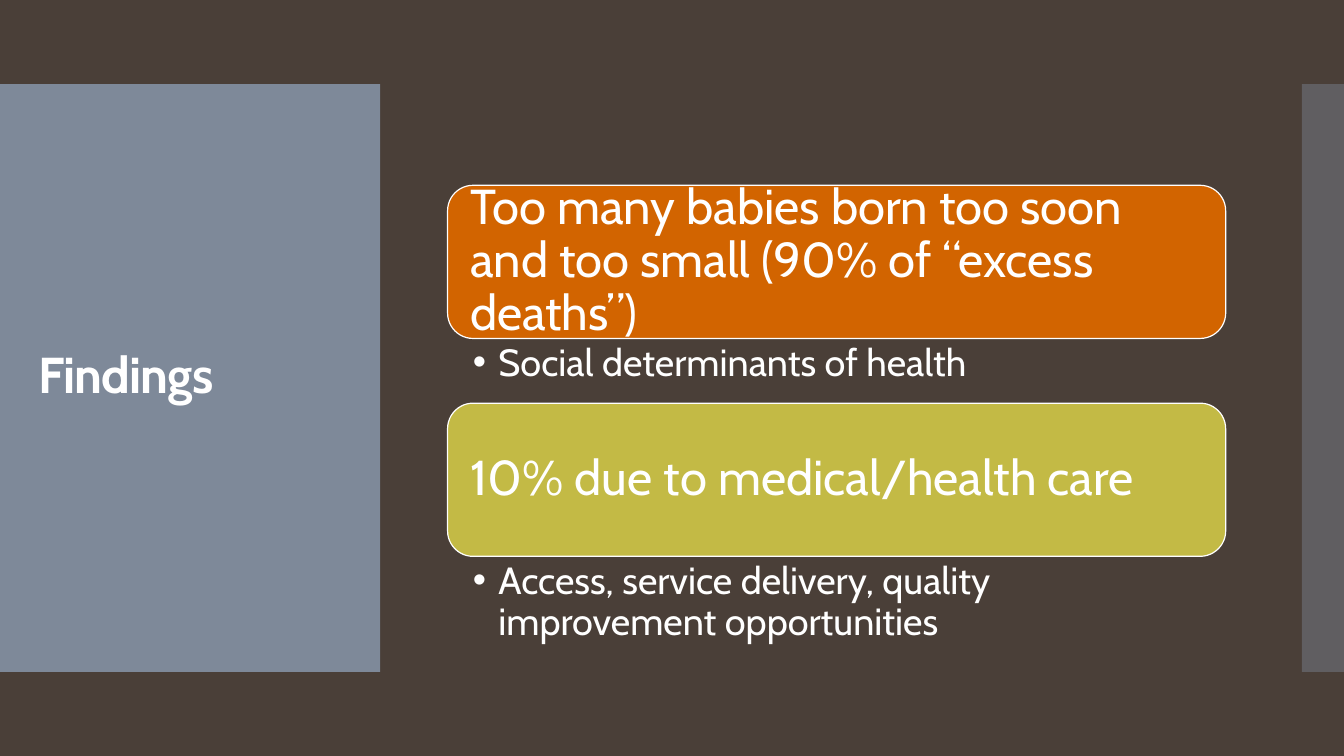
from lxml.etree import SubElement
from pptx import Presentation
from pptx.dml.color import RGBColor
from pptx.enum.shapes import MSO_SHAPE
from pptx.enum.text import MSO_ANCHOR, MSO_AUTO_SIZE, PP_ALIGN
from pptx.oxml.ns import qn
from pptx.util import Cm, Pt

COLORS = {
    "background": "4A3F38",
    "panel": "818E9F",
    "white": "FFFFFF",
    "orange": "D26400",
    "olive": "C3BA45",
}
FONT = "Cabin"

PANEL_TOP, PANEL_HEIGHT = 2.12, 14.81
CARD_LEFT, CARD_WIDTH, CARD_HEIGHT = 11.28, 19.61, 3.86
FIRST_CARD_TOP, CARD_PITCH = 4.67, 5.49

# heading, card colour, detail, detail height
FINDINGS = [
    ("Too many babies born too soon and too small (90% of “excess deaths”)",
     "orange", "Social determinants of health", 1.6),
    ("10% due to medical/health care",
     "olive", "Access, service delivery, quality improvement opportunities", 2.36),
]


def rgb(name):
    return RGBColor.from_string(COLORS[name])


def write_text(shape, text, size, bold=False, anchor=MSO_ANCHOR.MIDDLE,
               insets=(0.25, 0.13, 0.25, 0.13), spacing=0):
    """Fill a shape with one left-aligned paragraph; insets run left, top, right, bottom."""
    frame = shape.text_frame
    frame.word_wrap = True
    frame.auto_size = MSO_AUTO_SIZE.NONE
    frame.vertical_anchor = anchor
    (frame.margin_left, frame.margin_top,
     frame.margin_right, frame.margin_bottom) = map(Cm, insets)
    paragraph = frame.paragraphs[0]
    paragraph.alignment = PP_ALIGN.LEFT
    paragraph.line_spacing = 0.9
    paragraph.space_before = Pt(0)
    run = paragraph.add_run()
    run.text = text
    run.font.name = FONT
    run.font.size = Pt(size)
    run.font.bold = bold
    run.font.color.rgb = rgb("white")
    if spacing:
        run.font._element.set("spc", str(round(spacing * 100)))
    return paragraph


def place(shape, left, top, width, height):
    shape.left, shape.top = Cm(left), Cm(top)
    shape.width, shape.height = Cm(width), Cm(height)


def add_block(slide, preset, color, left, top, width, height):
    block = slide.shapes.add_shape(preset, Cm(left), Cm(top), Cm(width), Cm(height))
    block.shadow.inherit = False
    block.fill.solid()
    block.fill.fore_color.rgb = rgb(color)
    return block


def add_side_panel(slide, left, width, opacity):
    """Add a translucent band behind the title."""
    panel = add_block(slide, MSO_SHAPE.RECTANGLE, "panel",
                      left, PANEL_TOP, width, PANEL_HEIGHT)
    panel.line.fill.background()
    tint = panel.element.spPr.find(qn("a:solidFill"))[0]
    SubElement(tint, qn("a:alpha")).set("val", str(opacity * 1000))
    slide.shapes.title.element.addprevious(panel.element)


def add_card(slide, heading, color, top):
    card = add_block(slide, MSO_SHAPE.ROUNDED_RECTANGLE, color,
                     CARD_LEFT, top, CARD_WIDTH, CARD_HEIGHT)
    card.line.color.rgb = rgb("white")
    card.line.width = Pt(0.85)
    write_text(card, heading, 35, insets=(0.38,) * 4)


def fill_detail(body, detail, top, height):
    place(body, CARD_LEFT, top, CARD_WIDTH, height)
    paragraph = write_text(body, detail, 27, anchor=MSO_ANCHOR.TOP,
                           insets=(0.64, 0.13, 0.69, 0.13))
    properties = paragraph._p.get_or_add_pPr()
    properties.set("marL", str(Cm(0.64)))
    properties.set("indent", str(-Cm(0.64)))
    SubElement(properties, qn("a:buChar")).set("char", "•")


def main():
    deck = Presentation()
    deck.slide_width, deck.slide_height = Cm(33.87), Cm(19.05)
    two_content = deck.slide_layouts[3]
    slide = deck.slides.add_slide(two_content)
    slide.background.fill.solid()
    slide.background.fill.fore_color.rgb = rgb("background")

    add_side_panel(slide, 0, 9.58, opacity=95)
    add_side_panel(slide, 32.81, 1.06, opacity=40)

    title, *details = slide.placeholders
    place(title, 0.71, 3.12, 8.18, 12.78)
    write_text(title, "Findings", 36, bold=True, spacing=-0.6)

    for row, (body, finding) in enumerate(zip(details, FINDINGS)):
        heading, color, detail, detail_height = finding
        top = FIRST_CARD_TOP + row * CARD_PITCH
        add_card(slide, heading, color, top)
        fill_detail(body, detail, top + CARD_HEIGHT, detail_height)

    deck.save("out.pptx")


if __name__ == "__main__":
    main()
